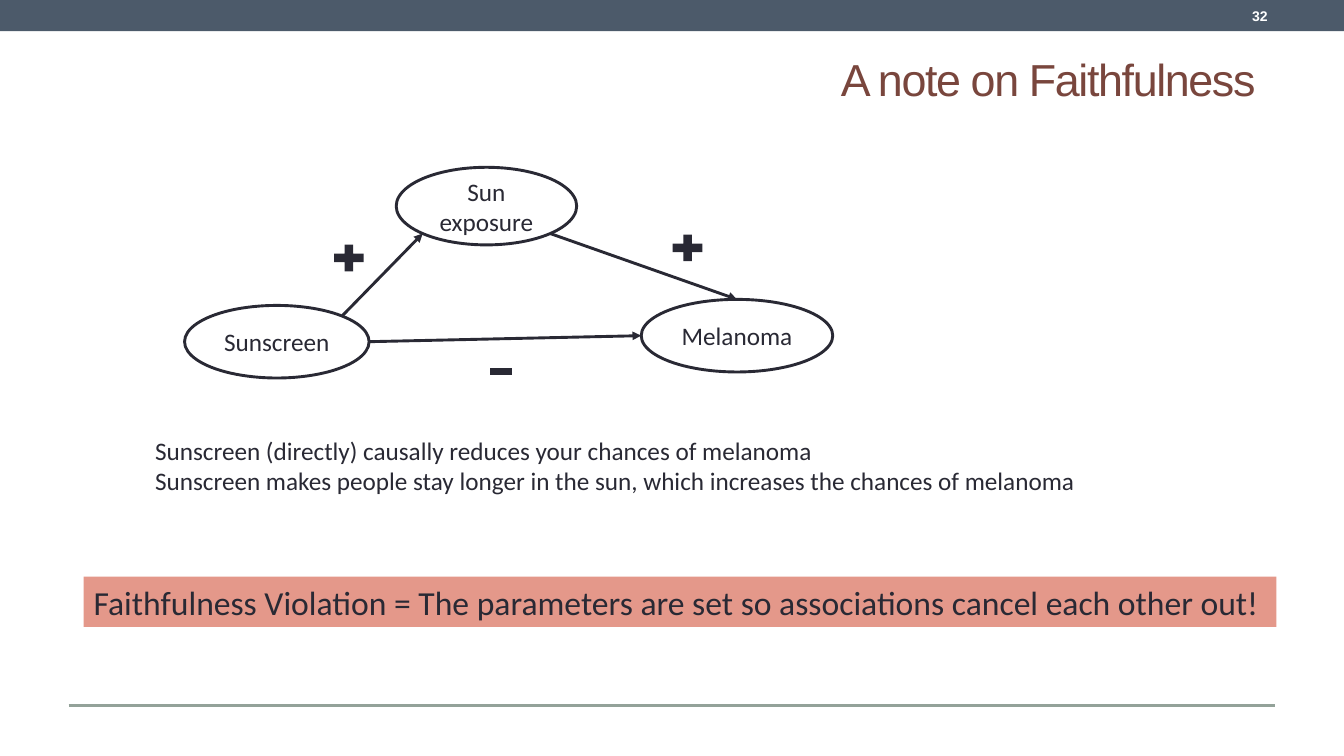
"""Build a slide on a faithfulness violation in a causal graph."""
from dataclasses import dataclass
from math import cos, radians, sin

from lxml import etree
from pptx import Presentation
from pptx.dml.color import RGBColor
from pptx.enum.shapes import MSO_CONNECTOR, MSO_SHAPE
from pptx.enum.text import MSO_ANCHOR, PP_ALIGN
from pptx.oxml.ns import qn
from pptx.util import Inches, Pt

WIDTH, HEIGHT = Inches(13.33), Inches(7.5)
TITLE_ONLY = 5
STRAIGHT = MSO_CONNECTOR.STRAIGHT
RECTANGLE, OVAL = MSO_SHAPE.RECTANGLE, MSO_SHAPE.OVAL
PLUS, MINUS = MSO_SHAPE.MATH_PLUS, MSO_SHAPE.MATH_MINUS
TOP, MIDDLE = MSO_ANCHOR.TOP, MSO_ANCHOR.MIDDLE
LEFT, CENTER, RIGHT = PP_ALIGN.LEFT, PP_ALIGN.CENTER, PP_ALIGN.RIGHT
INK, WHITE, SLATE, SAGE = "292934", "FFFFFF", "4C5A6A", "93A299"
BROWN, SALMON = "79463D", "E4988A"
STROKE = 2.08


@dataclass(frozen=True)
class Box:
    """Place and size in percent of the slide's width and height."""
    left: float
    top: float
    width: float
    height: float

    def emu(self) -> tuple[int, int, int, int]:
        """Return left, top, width and height as slide lengths."""
        return (*point(self.left, self.top), *point(self.width, self.height))

    def rim(self, angle: float) -> tuple[float, float]:
        """Return the point on the inscribed ellipse, clockwise from the right."""
        turn = radians(angle)
        return (self.left + self.width / 2 * (1 + cos(turn)),
                self.top + self.height / 2 * (1 + sin(turn)))


@dataclass(frozen=True)
class TextStyle:
    """Look of a text."""
    size: float
    color: str = INK
    font: str = "Calibri"
    align: PP_ALIGN = LEFT
    anchor: MSO_ANCHOR = TOP
    bold: bool = False


@dataclass(frozen=True)
class Effect:
    """Causal arrow between rim angles of two variables."""
    cause: str
    cause_angle: float
    outcome: str
    outcome_angle: float


@dataclass(frozen=True)
class Sign:
    """Plus or minus beside an arrow."""
    kind: MSO_SHAPE
    box: Box


VARIABLES = {
    "Sunscreen": Box(13.73, 40.4, 13.73, 9.6),
    "Sun exposure": Box(29.48, 22.13, 13.43, 10.27),
    "Melanoma": Box(47.71, 39.6, 14.25, 9.6),
}
EFFECTS = (
    Effect("Sunscreen", -45, "Sun exposure", 135),
    Effect("Sun exposure", 45, "Melanoma", -90),
    Effect("Sunscreen", 0, "Melanoma", 180),
)
SIGNS = (
    Sign(PLUS, Box(24.46, 31.73, 3, 4.8)),
    Sign(PLUS, Box(49.66, 30.4, 3, 4.8)),
    Sign(MINUS, Box(36.16, 47.33, 2.25, 3.6)),
)
NOTES = (
    "Sunscreen (directly) causally reduces your chances of melanoma\n"
    "Sunscreen makes people stay longer in the sun, "
    "which increases the chances of melanoma"
)
BANNER = ("Faithfulness Violation = The parameters are set "
          "so associations cancel each other out!")


def point(across: float, down: float) -> tuple[int, int]:
    """Turn percentages of the slide into lengths."""
    return round(WIDTH * across / 100), round(HEIGHT * down / 100)


def rgb(color: str) -> RGBColor:
    """Turn a hex string into a colour."""
    return RGBColor.from_string(color)


def write(shape, text: str, style: TextStyle) -> None:
    """Put styled text into a shape."""
    frame = shape.text_frame
    frame.text = text
    frame.word_wrap = True
    frame.vertical_anchor = style.anchor
    for paragraph in frame.paragraphs:
        paragraph.alignment = style.align
        for run in paragraph.runs:
            run.font.name = style.font
            run.font.size = Pt(style.size)
            run.font.bold = style.bold
            run.font.color.rgb = rgb(style.color)


def add_shape(slide, kind: MSO_SHAPE, box: Box, fill: str, line: str = ""):
    """Draw a flat preset shape, outlined if a line colour is given."""
    shape = slide.shapes.add_shape(kind, *box.emu())
    shape.shadow.inherit = False
    shape.fill.solid()
    shape.fill.fore_color.rgb = rgb(fill)
    if line:
        shape.line.color.rgb = rgb(line)
        shape.line.width = Pt(STROKE)
    else:
        shape.line.fill.background()
    return shape


def add_text(slide, box: Box, text: str, style: TextStyle) -> None:
    """Draw a text box."""
    write(slide.shapes.add_textbox(*box.emu()), text, style)


def add_line(slide, start: tuple[float, float], end: tuple[float, float],
             color: str, arrow: bool = False) -> None:
    """Draw a straight line, with an arrowhead at its end if wanted."""
    connector = slide.shapes.add_connector(STRAIGHT, *point(*start), *point(*end))
    connector.line.color.rgb = rgb(color)
    connector.line.width = Pt(STROKE)
    properties = connector.element.spPr
    if arrow:
        etree.SubElement(properties.find(qn("a:ln")), qn("a:tailEnd"), type="triangle")
    etree.SubElement(properties, qn("a:effectLst"))


def add_title(slide, text: str) -> None:
    """Move and format the title placeholder."""
    title = slide.shapes.title
    title.left, title.top, title.width, title.height = Box(5, 5.6, 90, 9.47).emu()
    write(title, text, TextStyle(32, BROWN, "Arial", RIGHT, MIDDLE))
    for properties in title.element.iter(qn("a:rPr")):
        properties.set("spc", "-100")


def add_graph(slide) -> None:
    """Draw the variables, their effects and the signs."""
    for name, box in VARIABLES.items():
        oval = add_shape(slide, OVAL, box, WHITE, INK)
        write(oval, name, TextStyle(18, align=CENTER, anchor=MIDDLE))
    for effect in EFFECTS:
        add_line(slide, VARIABLES[effect.cause].rim(effect.cause_angle),
                 VARIABLES[effect.outcome].rim(effect.outcome_angle), INK, arrow=True)
    for sign in SIGNS:
        add_shape(slide, sign.kind, sign.box, INK)


def main() -> None:
    """Build and save the presentation."""
    presentation = Presentation()
    presentation.slide_width, presentation.slide_height = WIDTH, HEIGHT
    slide = presentation.slides.add_slide(presentation.slide_layouts[TITLE_ONLY])
    add_shape(slide, RECTANGLE, Box(0, 0, 100, 4.13), SLATE)
    add_line(slide, (5.1, 93.33), (94.9, 93.33), SAGE)
    add_title(slide, "A note on Faithfulness ")
    add_text(slide, Box(83.35, 0.27, 11.7, 3.73), "32",
             TextStyle(10, WHITE, "Arial", RIGHT, MIDDLE, bold=True))
    add_graph(slide)
    banner = add_shape(slide, RECTANGLE, Box(6.23, 76.27, 88.75, 6.67), SALMON)
    write(banner, BANNER, TextStyle(24))
    add_text(slide, Box(10.8, 56.93, 72.54, 9.47), NOTES, TextStyle(18))
    presentation.save("out.pptx")


if __name__ == "__main__":
    main()
